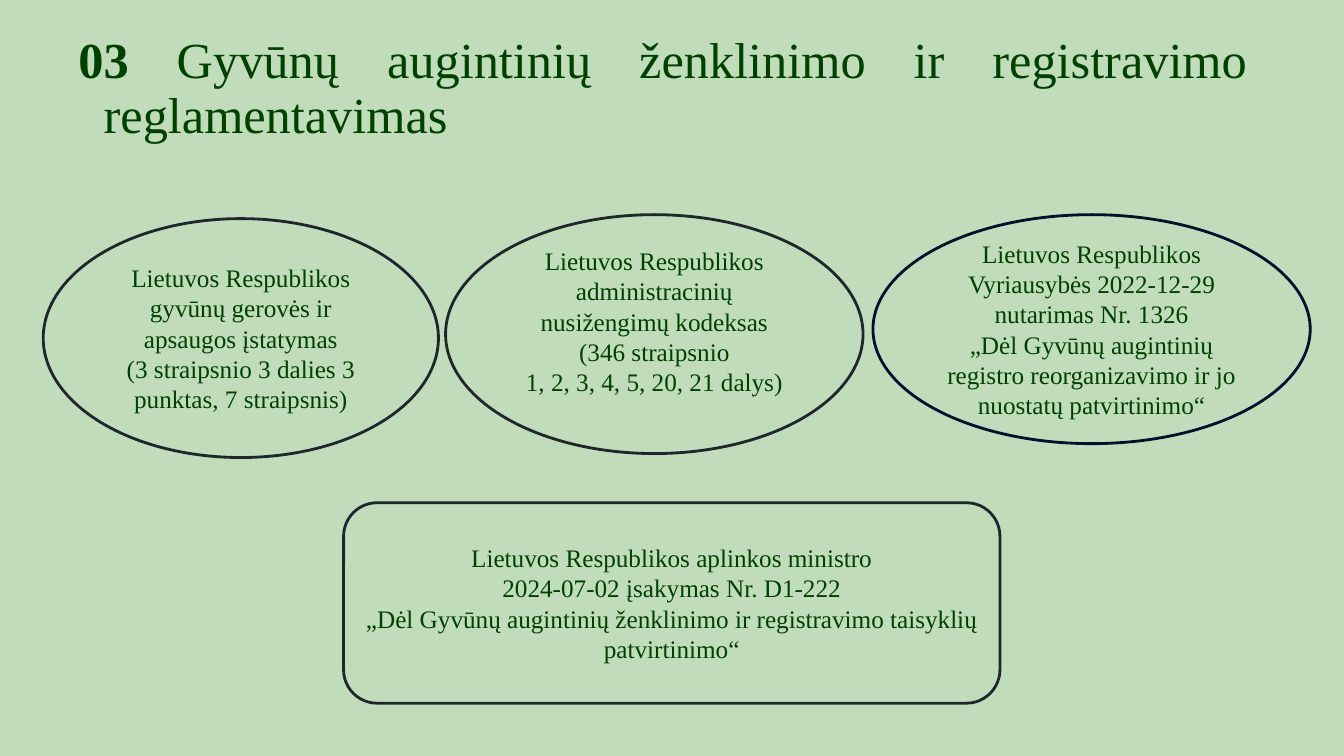
import dataclasses

import pptx
import pptx.dml.color
import pptx.enum.shapes
import pptx.enum.text
import pptx.util

Cm = pptx.util.Cm
SHAPE = pptx.enum.shapes.MSO_SHAPE
ALIGN = pptx.enum.text.PP_ALIGN
ANCHOR = pptx.enum.text.MSO_ANCHOR


@dataclasses.dataclass(frozen=True)
class Theme:
    font: str = "Times New Roman"
    background: str = "C0DCBB"
    text: str = "004100"
    outline: str = "20272C"
    outline_navy: str = "00112D"
    title_size: int = 36
    body_size: int = 18
    line_width: int = 2


def rgb(value):
    return pptx.dml.color.RGBColor.from_string(value)


class SlideBuilder:
    def __init__(self, presentation, theme):
        self.theme = theme
        self.slide = presentation.slides.add_slide(presentation.slide_layouts[5])
        background = self.slide.background.fill
        background.solid()
        background.fore_color.rgb = rgb(theme.background)

    def style_run(self, run, size, bold=False):
        run.font.name = self.theme.font
        run.font.size = pptx.util.Pt(size)
        run.font.bold = bold
        run.font.color.rgb = rgb(self.theme.text)

    def title(self, number, heading, left, top, width, height):
        title = self.slide.shapes.title
        title.left, title.top, title.width, title.height = map(
            Cm, (left, top, width, height))
        frame = title.text_frame
        frame.word_wrap = True
        frame.auto_size = pptx.enum.text.MSO_AUTO_SIZE.NONE
        frame.vertical_anchor = ANCHOR.TOP
        paragraph = frame.paragraphs[0]
        paragraph.alignment = ALIGN.JUSTIFY
        paragraph.line_spacing = 0.9
        # Hanging indent: the second line starts further right
        properties = paragraph._p.get_or_add_pPr()
        properties.set("marL", str(Cm(1.27)))
        properties.set("indent", str(-Cm(0.64)))
        for text, bold in ((number, True), (" " + heading, False)):
            run = paragraph.add_run()
            run.text = text
            self.style_run(run, self.theme.title_size, bold)

    def legal_act(self, kind, lines, left, top, width, height,
                  outline=None, bottom_inset=0.13):
        act = self.slide.shapes.add_shape(
            kind, Cm(left), Cm(top), Cm(width), Cm(height))
        act.shadow.inherit = False
        act.fill.solid()
        act.fill.fore_color.rgb = rgb(self.theme.background)
        act.line.color.rgb = rgb(outline or self.theme.outline)
        act.line.width = pptx.util.Pt(self.theme.line_width)
        frame = act.text_frame
        frame.word_wrap = True
        frame.vertical_anchor = ANCHOR.MIDDLE
        frame.margin_bottom = Cm(bottom_inset)
        frame.text = "\n".join(lines)
        for paragraph in frame.paragraphs:
            paragraph.alignment = ALIGN.CENTER
            for run in paragraph.runs:
                self.style_run(run, self.theme.body_size)


def main():
    presentation = pptx.Presentation()
    presentation.slide_width, presentation.slide_height = Cm(33.87), Cm(19.05)
    theme = Theme()
    builder = SlideBuilder(presentation, theme)

    # Heading
    builder.title("03", "Gyvūnų augintinių ženklinimo ir registravimo reglamentavimas",
                  1.09, 0.76, 30.61, 3.15)

    # Laws and government resolution
    builder.legal_act(
        SHAPE.OVAL,
        ["Lietuvos Respublikos gyvūnų gerovės ir apsaugos įstatymas",
         "(3 straipsnio 3 dalies 3 punktas, 7 straipsnis)"],
        1.09, 5.51, 9.96, 6.02)
    builder.legal_act(
        SHAPE.OVAL,
        ["Lietuvos Respublikos administracinių nusižengimų kodeksas",
         "(346 straipsnio",
         "1, 2, 3, 4, 5, 20, 21 dalys)"],
        11.23, 5.41, 10.52, 6.02, bottom_inset=0.78)
    builder.legal_act(
        SHAPE.OVAL,
        ["Lietuvos Respublikos Vyriausybės 2022-12-29 nutarimas Nr. 1326",
         "„Dėl Gyvūnų augintinių registro reorganizavimo ir jo nuostatų patvirtinimo“"],
        22, 5.41, 11.02, 5.77, outline=theme.outline_navy)

    # Ministerial order
    builder.legal_act(
        SHAPE.ROUNDED_RECTANGLE,
        ["Lietuvos Respublikos aplinkos ministro",
         "2024-07-02 įsakymas Nr. D1-222",
         "„Dėl Gyvūnų augintinių ženklinimo ir registravimo taisyklių patvirtinimo“"],
        8.66, 12.67, 16.54, 5.05)

    presentation.save("out.pptx")


if __name__ == "__main__":
    main()
